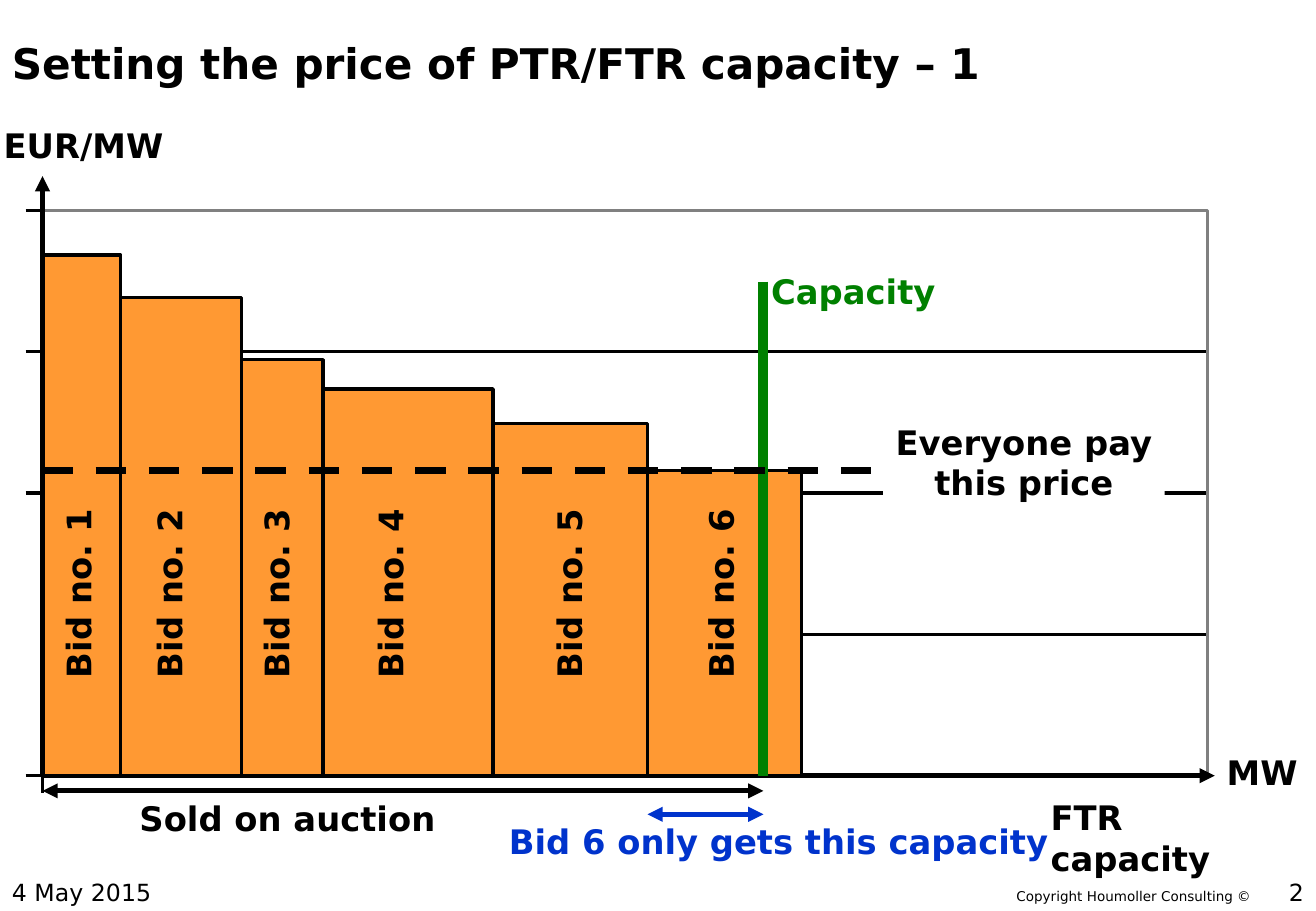
from itertools import pairwise
from lxml import etree
from pptx import Presentation
from pptx.dml.color import RGBColor
from pptx.enum.dml import MSO_LINE
from pptx.enum.shapes import MSO_CONNECTOR, MSO_SHAPE
from pptx.enum.text import MSO_ANCHOR as ANCHOR, PP_ALIGN as ALIGN
from pptx.oxml.ns import qn
from pptx.util import Pt

# Content
TITLE = "Setting the price of PTR/FTR capacity – 1"
DATE, COPYRIGHT, PAGE = "4 May 2015", "Copyright Houmoller Consulting ©", "2"
PRICE_NOTE = ["Everyone pay", "this price"]
BIDS = [  # name, top of bar, centre of label
    ("Bid no. 1", 151.2, 48.6),
    ("Bid no. 2", 176.2, 102.6),
    ("Bid no. 3", 213.2, 166),
    ("Bid no. 4", 230.6, 233.6),
    ("Bid no. 5", 251, 339.5),
    ("Bid no. 6", 278.8, 429.5),
]
BID_EDGES = [25.2, 71.5, 143.3, 191.5, 292.3, 383.8, 475.2]
NOTES = [  # text, left, top, width, colour
    ("EUR/MW", -5, 70.6, 114.5, "black"),
    ("MW", 720, 442, 57, "black"),
    ("Sold on auction", 75.6, 469.4, 194.4, "black"),
    ("Bid 6 only gets this capacity", 294.5, 483.1, 337, "blue"),
    ("Capacity", 450, 157, 114.5, "green"),
]
COLORS = {"black": "000000", "white": "FFFFFF", "grey": "808080",
          "orange": "FF9933", "green": "008000", "blue": "0033CC"}
FONT = "DejaVu Sans"

# Layout of the plot
LEFT, RIGHT, TOP, BASE = 25.2, 715.7, 124.7, 459.8
GRID_STEP = (BASE - TOP) / 4
TICK = 10
CAPACITY_X, SOLD_Y, BID6_Y = 452.5, 468.8, 482.7
PRICE_Y = BIDS[-1][1]
LABEL_W, LABEL_H, LABEL_Y = 116, 36, 351

prs = Presentation()
prs.slide_width, prs.slide_height = Pt(780), Pt(540)
slide = prs.slides.add_slide(prs.slide_layouts[6])
shapes = slide.shapes


def rgb(color):
    return RGBColor.from_string(COLORS[color])


def add_text(text, left, top, width, height=36, *, size=20, bold=True, color="black",
             align=ALIGN.LEFT, anchor=ANCHOR.TOP, wrap=False, rotation=0, fill=None):
    box = shapes.add_textbox(Pt(left), Pt(top), Pt(width), Pt(height))
    box.rotation = rotation
    if fill:
        box.fill.solid()
        box.fill.fore_color.rgb = rgb(fill)
    frame = box.text_frame
    frame.word_wrap, frame.vertical_anchor = wrap, anchor
    lines = [text] if isinstance(text, str) else text
    for i, line in enumerate(lines):
        para = frame.paragraphs[0] if i == 0 else frame.add_paragraph()
        para.alignment = align
        run = para.add_run()
        run.text = line
        run.font.name, run.font.size, run.font.bold = FONT, Pt(size), bold
        run.font.color.rgb = rgb(color)


def add_rect(left, top, right, bottom, line, fill=None):
    rect = shapes.add_shape(MSO_SHAPE.RECTANGLE, Pt(left), Pt(top),
                            Pt(right - left), Pt(bottom - top))
    rect.shadow.inherit = False
    rect.line.color.rgb, rect.line.width = rgb(line), Pt(2)
    if fill:
        rect.fill.solid()
        rect.fill.fore_color.rgb = rgb(fill)
    else:
        rect.fill.background()


def add_line(x1, y1, x2, y2, width=0, color="black", dash=None, arrows=()):
    line = shapes.add_connector(MSO_CONNECTOR.STRAIGHT, Pt(x1), Pt(y1), Pt(x2), Pt(y2))
    line.line.color.rgb, line.line.width = rgb(color), Pt(width)
    if dash:
        line.line.dash_style = dash
    for end in arrows:
        etree.SubElement(line.line._ln, qn(f"a:{end}"), type="triangle")
    etree.SubElement(line._element.spPr, qn("a:effectLst"))


# Title and footer
add_text(TITLE, 0, 0, 742, 74, size=25, anchor=ANCHOR.MIDDLE, wrap=True)
add_text(DATE, 0, 510.5, 163, size=14, bold=False, anchor=ANCHOR.MIDDLE)
add_text(COPYRIGHT, 595.4, 522.7, 155.5, 17, size=8, bold=False)
add_text(PAGE, 617.5, 510.5, 162.5, size=14, bold=False,
         align=ALIGN.RIGHT, anchor=ANCHOR.MIDDLE)

# Grid and frame
for i in range(4):
    grid_y = TOP + i * GRID_STEP
    add_line(LEFT, grid_y, RIGHT, grid_y)
add_rect(LEFT, TOP, RIGHT, BASE, "grey")

# Bids
add_line(LEFT, BASE, 720, BASE, 3, arrows=["tailEnd"])
for (bid, top, label_x), (left, right) in zip(BIDS, pairwise(BID_EDGES)):
    add_rect(left, top, right, BASE, "black", "orange")
    add_text(bid, label_x - LABEL_W / 2, LABEL_Y - LABEL_H / 2, LABEL_W, LABEL_H,
             rotation=270)

# Capacity and price
add_line(CAPACITY_X, 167, CAPACITY_X, BASE, 6, "green")
add_line(LEFT, PRICE_Y, 520, PRICE_Y, 4.5, dash=MSO_LINE.DASH)
add_text(PRICE_NOTE, 523.4, 246.2, 167, 55.5, align=ALIGN.CENTER, fill="white")

# Vertical axis with ticks
for i in (0, 1, 2, 4):
    tick_y = TOP + i * GRID_STEP
    add_line(LEFT - TICK, tick_y, LEFT, tick_y)
add_line(LEFT, BASE, LEFT, BASE + TICK)
add_line(LEFT, BASE, LEFT, 104.4, 3, arrows=["tailEnd"])

# Ranges below the axis
for start, y, color in [(LEFT, SOLD_Y, "black"), (BID_EDGES[-2], BID6_Y, "blue")]:
    add_line(start, y, CAPACITY_X, y, 3, color, arrows=["headEnd", "tailEnd"])

# Notes
for note, left, top, width, color in NOTES:
    add_text(note, left, top, width, color=color)
add_text("FTR capacity", 615.6, 468.9, 120, 54, wrap=True)

prs.save("out.pptx")
